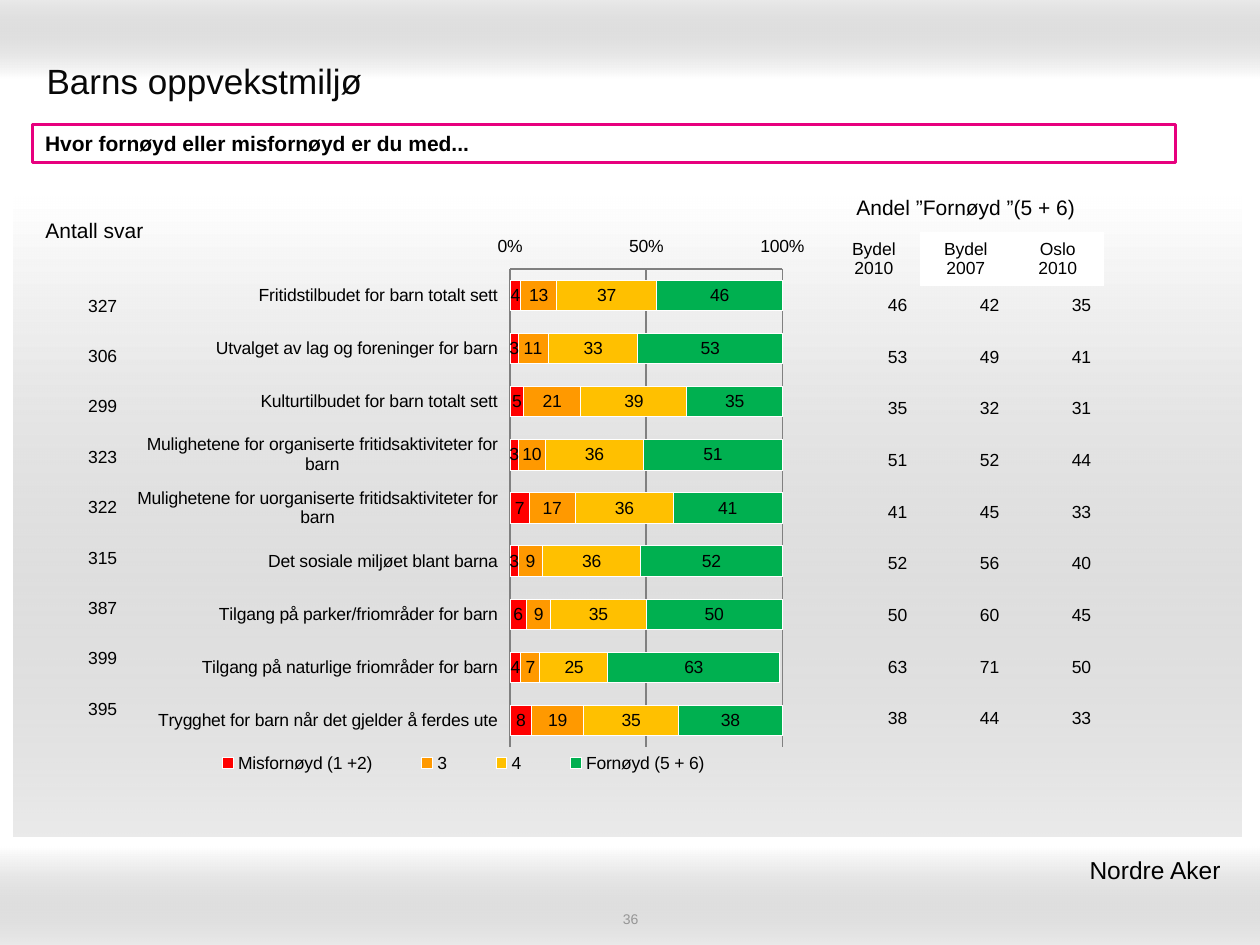
from lxml import etree
from pptx import Presentation
from pptx.chart.data import CategoryChartData
from pptx.dml.color import RGBColor
from pptx.enum.chart import (XL_CHART_TYPE as CT, XL_LEGEND_POSITION as LP,
                             XL_TICK_LABEL_POSITION as TL, XL_TICK_MARK as TM)
from pptx.enum.shapes import MSO_SHAPE
from pptx.enum.text import MSO_ANCHOR, PP_ALIGN
from pptx.oxml import parse_xml
from pptx.oxml.ns import nsdecls, qn
from pptx.util import Inches, Pt

COLORS = {"black": "000000", "title": "080808", "number": "969696",
          "white": "FFFFFF", "shade": "999999", "pink": "E7007E", "grid": "808080"}
C = {name: RGBColor.from_string(value) for name, value in COLORS.items()}
FONT = "Arial"
NO_STYLE = "{2D5ABB26-0587-4C30-8999-92F81FD0307C}"

# Question, number of answers, shares per answer group, satisfied 2007 and Oslo 2010
ROWS = [
    ("Fritidstilbudet for barn totalt sett", 327, (4, 13, 37, 46), 42, 35),
    ("Utvalget av lag og foreninger for barn", 306, (3, 11, 33, 53), 49, 41),
    ("Kulturtilbudet for barn totalt sett", 299, (5, 21, 39, 35), 32, 31),
    ("Mulighetene for organiserte fritidsaktiviteter for barn", 323, (3, 10, 36, 51), 52, 44),
    ("Mulighetene for uorganiserte fritidsaktiviteter for barn", 322, (7, 17, 36, 41), 45, 33),
    ("Det sosiale miljøet blant barna", 315, (3, 9, 36, 52), 56, 40),
    ("Tilgang på parker/friområder for barn", 387, (6, 9, 35, 50), 60, 45),
    ("Tilgang på naturlige friområder for barn", 399, (4, 7, 25, 63), 71, 50),
    ("Trygghet for barn når det gjelder å ferdes ute", 395, (8, 19, 35, 38), 44, 33),
]
SERIES = [("Misfornøyd (1 +2)", "FF0000"), ("3", "FF9900"),
          ("4", "FFC000"), ("Fornøyd (5 + 6)", "00B050")]


def write(tf, text, size=10, color="black", bold=False, align=PP_ALIGN.LEFT,
          anchor=MSO_ANCHOR.TOP):
    tf.word_wrap = True
    tf.vertical_anchor = anchor
    for i, line in enumerate(text.split("\n")):
        p = tf.paragraphs[0] if i == 0 else tf.add_paragraph()
        p.alignment = align
        r = p.add_run()
        r.text = line
        r.font.name, r.font.size, r.font.bold = FONT, Pt(size), bold
        r.font.color.rgb = C[color]


def add_plain_table(x, y, widths, heights, texts, align, size=10):
    frame = s.shapes.add_table(len(heights), len(widths), Inches(x), Inches(y),
                               Inches(sum(widths)), Inches(sum(heights)))
    tbl = frame.table
    tbl.first_row = tbl.horz_banding = False
    frame._element.find(".//" + qn("a:tableStyleId")).text = NO_STYLE
    for col, width in zip(tbl.columns, widths):
        col.width = Inches(width)
    for row, height, values in zip(tbl.rows, heights, texts):
        row.height = Inches(height)
        for cell, value in zip(row.cells, values):
            cell.fill.background()
            cell.vertical_anchor = MSO_ANCHOR.MIDDLE
            if value is not None:
                write(cell.text_frame, str(value), size, align=align,
                      anchor=MSO_ANCHOR.MIDDLE)
    return tbl


prs = Presentation()
prs.slide_width, prs.slide_height = Inches(10), Inches(7.5)
s = prs.slides.add_slide(prs.slide_layouts[5])

# Shaded bands: header, footer and content panel
for x, y, w, h, angle in [(0, 0, 10, 0.62, 90), (0, 6.72, 10, 0.78, 270),
                          (0.11, 1.56, 9.74, 5.08, 270)]:
    sp = s.shapes.add_shape(MSO_SHAPE.RECTANGLE, Inches(x), Inches(y), Inches(w), Inches(h))
    sp.shadow.inherit = False
    sp.line.fill.background()
    sp.fill.gradient()
    sp.fill.gradient_angle = angle
    for stop, name in zip(sp.fill.gradient_stops, ("white", "shade")):
        stop.color.rgb = C[name]
    shade = sp._element.spPr.findall(".//" + qn("a:srgbClr"))[-1]
    etree.SubElement(shade, qn("a:alpha")).set("val", "20000")

# Title, moved in front of the bands
title = s.shapes.title
title.left, title.top, title.width, title.height = map(Inches, (0.27, 0.36, 9.45, 0.55))
write(title.text_frame, "Barns oppvekstmiljø", 20, "title", anchor=MSO_ANCHOR.MIDDLE)
s.shapes._spTree.append(title._element)

# Question box
sp = s.shapes.add_shape(MSO_SHAPE.RECTANGLE, Inches(0.26), Inches(0.99), Inches(9.07), Inches(0.3))
sp.shadow.inherit = False
sp.fill.solid()
sp.fill.fore_color.rgb = C["white"]
sp.line.color.rgb = C["pink"]
sp.line.width = Pt(2)
write(sp.text_frame, "Hvor fornøyd eller misfornøyd er du med...", 12, bold=True)

# Stacked bar chart
data = CategoryChartData()
data.categories = [row[0] for row in ROWS]
for i, (name, _) in enumerate(SERIES):
    data.add_series(name, [row[2][i] for row in ROWS])
chart = s.shapes.add_chart(CT.BAR_STACKED, Inches(0.98), Inches(1.79),
                           Inches(5.51), Inches(4.54), data).chart
chart.has_title = False
chart.font.name, chart.font.size = FONT, Pt(10)
chart.font.color.rgb = C["black"]
plot = chart.plots[0]
plot.gap_width, plot.overlap, plot.vary_by_categories = 75, 100, False
for series, (_, color) in zip(plot.series, SERIES):
    series.format.fill.solid()
    series.format.fill.fore_color.rgb = RGBColor.from_string(color)
    series.format.line.color.rgb = C["white"]
    labels = series.data_labels
    labels.show_value = True
    labels.number_format, labels.number_format_is_linked = "0", False

cat, val = chart.category_axis, chart.value_axis
cat.reverse_order = True
cat.major_tick_mark = TM.NONE
val.minimum_scale, val.maximum_scale, val.major_unit = 0, 100, 50
val.major_tick_mark = TM.INSIDE
val.major_gridlines.format.line.color.rgb = C["grid"]
val.tick_labels.number_format = "General\\%"
val.tick_labels.number_format_is_linked = False
for axis in (cat, val):
    axis.tick_label_position = TL.LOW
    axis.format.line.color.rgb = C["grid"]

chart.has_legend = True
chart.legend.position = LP.BOTTOM
chart.legend.include_in_layout = False

# Fixed places for the plot area and the legend
plot_area = chart._chartSpace.chart.plotArea
for old in plot_area.findall(qn("c:layout")):
    plot_area.remove(old)
legend = chart.legend._element
for old in legend.findall(qn("c:layout")):
    legend.remove(old)
for parent, index, target, box in [
        (plot_area, 0, '<c:layoutTarget val="inner"/>', (0.557, 0.076, 0.392, 0.836)),
        (legend, 1, "", (0.08, 0.91, 0.82, 0.06))]:
    sizes = "".join(f'<c:{tag} val="{v}"/>' for tag, v in zip("xywh", box))
    parent.insert(index, parse_xml(
        f'<c:layout {nsdecls("c")}><c:manualLayout>{target}<c:xMode val="edge"/>'
        f'<c:yMode val="edge"/>{sizes}</c:manualLayout></c:layout>'))

# Satisfied shares and their heading
three = [0.73] * 3
n = len(ROWS)
add_plain_table(6.57, 2.22, three, [0.41] * n,
                [(row[2][-1], row[3], row[4]) for row in ROWS], PP_ALIGN.RIGHT)
head = add_plain_table(6.57, 1.47, three, [0.37, 0.43],
                       [(None,) * 3, ("Bydel\n2010", "Bydel\n2007", "Oslo\n2010")],
                       PP_ALIGN.CENTER)
head.cell(0, 0).merge(head.cell(0, 2))
write(head.cell(0, 0).text_frame, "Andel ”Fornøyd ”(5 + 6)", 12,
      align=PP_ALIGN.CENTER, anchor=MSO_ANCHOR.MIDDLE)
for col in (1, 2):
    head.cell(1, col).fill.solid()
    head.cell(1, col).fill.fore_color.rgb = C["white"]

# Number of answers and its heading
add_plain_table(0.51, 2.23, [0.52], [0.4] * n, [(row[1],) for row in ROWS], PP_ALIGN.RIGHT)
add_plain_table(0.04, 1.54, [1.42], [0.59], [("Antall svar",)], PP_ALIGN.CENTER, 12)

# District name and page number
tb = s.shapes.add_textbox(Inches(6.1), Inches(6.74), Inches(3.74), Inches(0.34))
write(tb.text_frame, "Nordre Aker ", 14, align=PP_ALIGN.RIGHT)
tb = s.shapes.add_textbox(Inches(3.42), Inches(7.22), Inches(3.17), Inches(0.14))
write(tb.text_frame, "36", 8, "number", align=PP_ALIGN.CENTER, anchor=MSO_ANCHOR.MIDDLE)
tb.text_frame.margin_top = tb.text_frame.margin_bottom = 0

prs.save("out.pptx")
